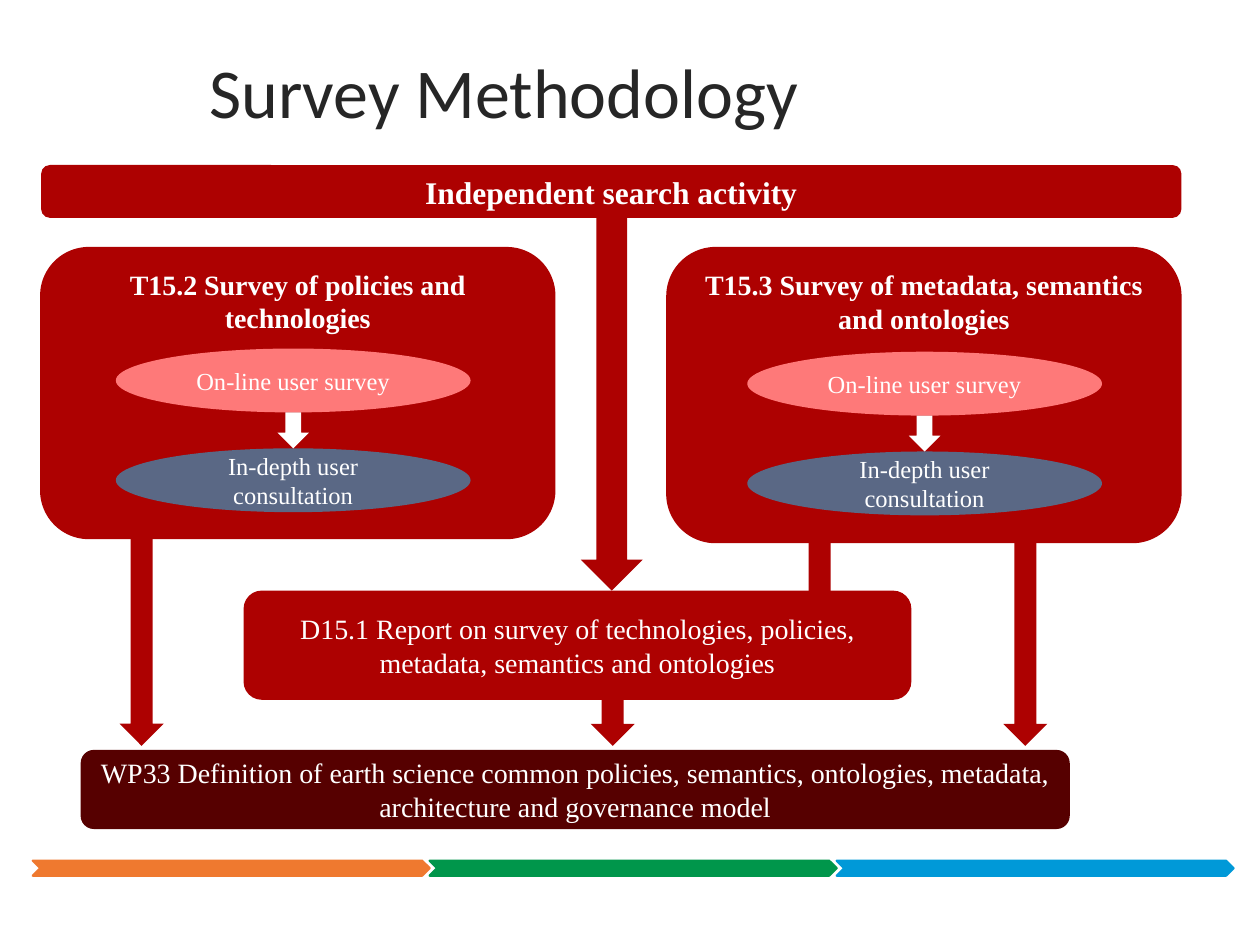
from dataclasses import dataclass
from pptx import Presentation
from pptx.dml.color import RGBColor
from pptx.enum.shapes import MSO_SHAPE as Preset
from pptx.enum.text import MSO_ANCHOR as Anchor, PP_ALIGN as Align
from pptx.util import Pt


@dataclass(frozen=True)
class Theme:
    red: str = "AD0101"
    dark_red: str = "560000"
    pink: str = "FE7979"
    slate: str = "5A6885"
    white: str = "FFFFFF"
    title_color: str = "262626"
    orange: str = "EF792F"
    green: str = "00964B"
    blue: str = "0099D8"
    title_font: str = "Calibri"
    body_font: str = "Times New Roman"
    title_size: int = 40
    bar_size: int = 18
    box_size: int = 16
    step_size: int = 14


THEME = Theme()
TITLE = "Survey Methodology"
TITLE_BOX = (112.3, 15.8, 492.5, 63.4)

FOOTER_TOP, FOOTER_HEIGHT = 491.8, 8.6
FOOTER_LEFT = 18.7
FOOTER = [(THEME.orange, 226.8), (THEME.green, 232.6), (THEME.blue, 226.8)]

SEARCH = ("Independent search activity", (23.5, 94.3, 651.6, 30.2))
REPORT = (
    "D15.1 Report on survey of technologies, policies, metadata, semantics and ontologies",
    (139.2, 337.5, 381.6, 62.4),
)
DEFINITION = (
    "WP33 Definition of earth science common policies, semantics, ontologies, "
    "metadata, architecture and governance model",
    (46.1, 428.5, 565.2, 45.2),
)
SURVEYS = [
    ("T15.2 Survey of policies and technologies", (22.9, 141.1, 294.5, 167), (66.2, 199.2)),
    ("T15.3 Survey of metadata, semantics and ontologies", (380.7, 141.1, 294.5, 169.3), (427, 201)),
]
STEPS = [("On-line user survey", THEME.pink), ("In-depth user consultation", THEME.slate)]
STEP_WIDTH, STEP_HEIGHT, STEP_PITCH = 202.7, 36.5, 57
STEP_ARROW_WIDTH = 18

SEARCH_ARROW = (331.9, 121, 35.3, 216.5)
REPORT_ARROW = (455.8, 308, 25.2, 42.5)
DEFINITION_ARROWS = [(68.3, 295.8), (337.5, 398), (573.3, 295.5)]
ARROW_WIDTH, ARROW_TIP = 25.2, 426.2


def add_shape(shapes, preset, box, color):
    shape = shapes.add_shape(preset, *map(Pt, box))
    shape.shadow.inherit = False
    shape.fill.solid()
    shape.fill.fore_color.rgb = RGBColor.from_string(color)
    shape.line.fill.background()
    return shape


def add_box(shapes, preset, text, box, color, size, bold=False, anchor=Anchor.MIDDLE):
    shape = add_shape(shapes, preset, box, color)
    frame = shape.text_frame
    frame.word_wrap = True
    frame.vertical_anchor = anchor
    paragraph = frame.paragraphs[0]
    paragraph.text = text
    paragraph.alignment = Align.CENTER
    font = paragraph.font
    font.name, font.size, font.bold = THEME.body_font, Pt(size), bold
    font.color.rgb = RGBColor.from_string(THEME.white)


def add_title(slide):
    title = slide.shapes.title
    title.left, title.top, title.width, title.height = map(Pt, TITLE_BOX)
    title.text = TITLE
    title.text_frame.vertical_anchor = Anchor.BOTTOM
    paragraph = title.text_frame.paragraphs[0]
    paragraph.alignment = Align.LEFT
    paragraph.font.name = THEME.title_font
    paragraph.font.size = Pt(THEME.title_size)
    paragraph.font.color.rgb = RGBColor.from_string(THEME.title_color)


def add_footer(shapes):
    left = FOOTER_LEFT
    for color, width in FOOTER:
        chevron = add_shape(shapes, Preset.CHEVRON, (left, FOOTER_TOP, width, FOOTER_HEIGHT), color)
        chevron.line.color.rgb = RGBColor.from_string(color)
        chevron.line.width = Pt(1.25)
        left += width


def add_steps(shapes, left, top):
    group = shapes.add_group_shape().shapes
    for index, (text, color) in enumerate(STEPS):
        box = (left, top + index * STEP_PITCH, STEP_WIDTH, STEP_HEIGHT)
        add_box(group, Preset.OVAL, text, box, color, THEME.step_size)
    arrow_left = left + (STEP_WIDTH - STEP_ARROW_WIDTH) / 2
    arrow_box = (arrow_left, top + STEP_HEIGHT, STEP_ARROW_WIDTH, STEP_PITCH - STEP_HEIGHT)
    add_shape(group, Preset.DOWN_ARROW, arrow_box, THEME.white)


def main():
    presentation = Presentation()
    presentation.slide_width, presentation.slide_height = Pt(720), Pt(540)
    slide = presentation.slides.add_slide(presentation.slide_layouts[5])
    shapes = slide.shapes
    add_title(slide)
    add_footer(shapes)

    arrows = [SEARCH_ARROW, REPORT_ARROW]
    arrows += [(left, top, ARROW_WIDTH, ARROW_TIP - top) for left, top in DEFINITION_ARROWS]
    for box in arrows:
        add_shape(shapes, Preset.DOWN_ARROW, box, THEME.red)

    rounded = Preset.ROUNDED_RECTANGLE
    add_box(shapes, rounded, *SEARCH, THEME.red, THEME.bar_size, bold=True)
    add_box(shapes, rounded, *REPORT, THEME.red, THEME.box_size)
    add_box(shapes, rounded, *DEFINITION, THEME.dark_red, THEME.box_size)
    for text, box, steps_corner in SURVEYS:
        add_box(shapes, rounded, text, box, THEME.red, THEME.box_size, bold=True, anchor=Anchor.TOP)
        add_steps(shapes, *steps_corner)

    presentation.save("out.pptx")


if __name__ == "__main__":
    main()
